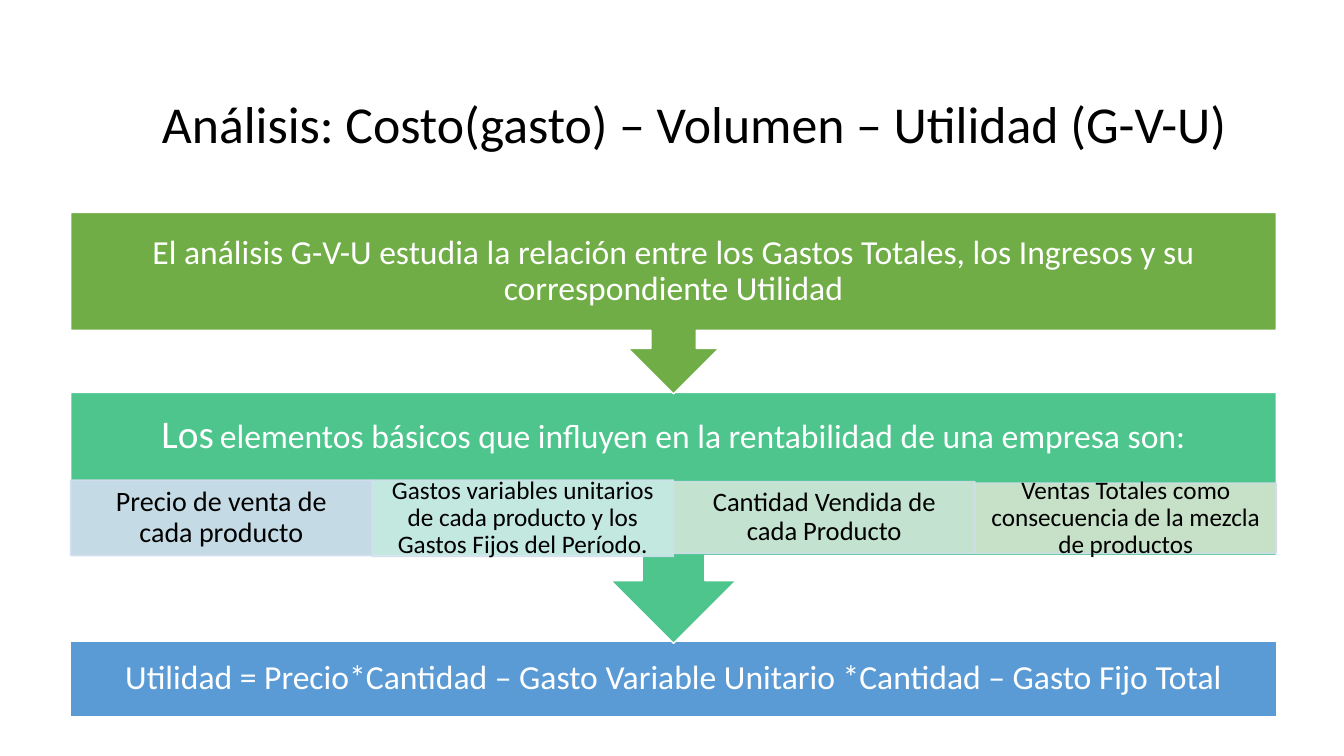
import lxml.etree
import pptx
import pptx.dml.color
import pptx.enum.shapes
import pptx.enum.text
import pptx.oxml.ns
import pptx.util

RGBColor = pptx.dml.color.RGBColor
Shapes = pptx.enum.shapes.MSO_SHAPE
Align = pptx.enum.text.PP_ALIGN
Inches = pptx.util.Inches

WHITE = RGBColor(0xFF, 0xFF, 0xFF)
BLACK = RGBColor(0x00, 0x00, 0x00)
GREEN = RGBColor(0x70, 0xAD, 0x47)
TEAL = RGBColor(0x4D, 0xC5, 0x8D)
BLUE = RGBColor(0x5B, 0x9B, 0xD5)
PALE_BLUE = RGBColor(0xD2, 0xDE, 0xEF)
PALE_CYAN = RGBColor(0xD0, 0xEC, 0xEA)
PALE_TEAL = RGBColor(0xD0, 0xE7, 0xD8)
PALE_GREEN = RGBColor(0xD5, 0xE3, 0xCF)


class ProcessSlide:
    font = "Calibri"
    left_margin = 0.7
    column_width = 2.99
    row_height = 0.75
    columns = 4

    def __init__(self, presentation):
        self.slide = presentation.slides.add_slide(presentation.slide_layouts[6])

    def place(self, column, row, column_span, row_span):
        return (
            Inches(self.left_margin + column * self.column_width),
            Inches(row * self.row_height),
            Inches(column_span * self.column_width),
            Inches(row_span * self.row_height),
        )

    def fill_text(self, shape, runs, color, insets, alignment=Align.CENTER):
        frame = shape.text_frame
        frame.word_wrap = True
        frame.vertical_anchor = pptx.enum.text.MSO_ANCHOR.MIDDLE
        horizontal, vertical = insets
        frame.margin_left = frame.margin_right = Inches(horizontal)
        frame.margin_top = frame.margin_bottom = Inches(vertical)
        paragraph = frame.paragraphs[0]
        paragraph.alignment = alignment
        paragraph.line_spacing = 0.9
        for text, size in runs:
            run = paragraph.add_run()
            run.text = text
            run.font.name = self.font
            run.font.size = pptx.util.Pt(size)
            run.font.color.rgb = color

    def label(self, cell, runs, color, insets, alignment=Align.CENTER):
        box = self.slide.shapes.add_textbox(*self.place(*cell))
        self.fill_text(box, runs, color, insets, alignment)

    def block(self, preset, cell, fill, line=WHITE, opacity=100):
        shape = self.slide.shapes.add_shape(preset, *self.place(*cell))
        shape.shadow.inherit = False
        shape.fill.solid()
        shape.fill.fore_color.rgb = fill
        shape.line.color.rgb = line
        shape.line.width = pptx.util.Pt(1)
        if opacity < 100:
            tag = pptx.oxml.ns.qn("a:srgbClr")
            for color in shape.element.spPr.iter(tag):
                alpha = lxml.etree.SubElement(color, pptx.oxml.ns.qn("a:alpha"))
                alpha.set("val", str(opacity * 1000))
        return shape

    def bar(self, row, row_span, fill, runs):
        shape = self.block(Shapes.RECTANGLE, (0, row, self.columns, row_span), fill)
        self.fill_text(shape, runs, WHITE, (0.19, 0.19))

    def callout(self, row, row_span, text_span, fill, runs, inset):
        shape = self.block(
            Shapes.UP_ARROW_CALLOUT, (0, row, self.columns, row_span), fill
        )
        shape.rotation = 180
        self.label((0, row, self.columns, text_span), runs, WHITE, (inset, inset))

    def factor(self, column, row, row_span, fill, runs, inset):
        shape = self.block(
            Shapes.RECTANGLE, (column, row, 1, row_span), fill, PALE_BLUE, 90
        )
        self.fill_text(shape, runs, BLACK, (inset, 0.03))


def main():
    presentation = pptx.Presentation()
    presentation.slide_width = Inches(13.33)
    presentation.slide_height = Inches(7.5)
    process = ProcessSlide(presentation)

    process.label(
        (0.27, 1.04, 3.67, 1.28),
        [("Análisis: Costo(gasto) – Volumen – Utilidad (G-V-U)", 37)],
        BLACK,
        (0.1, 0.05),
        Align.LEFT,
    )
    process.bar(
        8.48, 1, BLUE,
        [("Utilidad = Precio*Cantidad – Gasto Variable Unitario *Cantidad – Gasto Fijo Total", 24)],
    )
    process.callout(
        5.19, 3.32, 1.16, TEAL,
        [
            ("Los", 28),
            (" ", 19),
            ("elementos básicos que influyen en la rentabilidad de una empresa son:", 24),
        ],
        0.22,
    )
    factors = [
        (6.35, 1, PALE_BLUE, "Precio de venta de cada producto", 20, 0.16),
        (6.35, 1.01, PALE_CYAN,
         "Gastos variables unitarios de cada producto y los Gastos Fijos del Período.", 18, 0.14),
        (6.37, 0.95, PALE_TEAL, "Cantidad Vendida de cada Producto", 19, 0.15),
        (6.39, 0.93, PALE_GREEN,
         "Ventas Totales como consecuencia de la mezcla de productos", 18, 0.14),
    ]
    for column, (row, row_span, fill, text, size, inset) in enumerate(factors):
        process.factor(column, row, row_span, fill, [(text, size)], inset)
    process.callout(
        2.81, 2.4, 1.56, GREEN,
        [("El análisis G-V-U estudia la relación entre los Gastos Totales, "
          "los Ingresos y su correspondiente Utilidad", 24)],
        0.19,
    )
    presentation.save("out.pptx")


if __name__ == "__main__":
    main()
